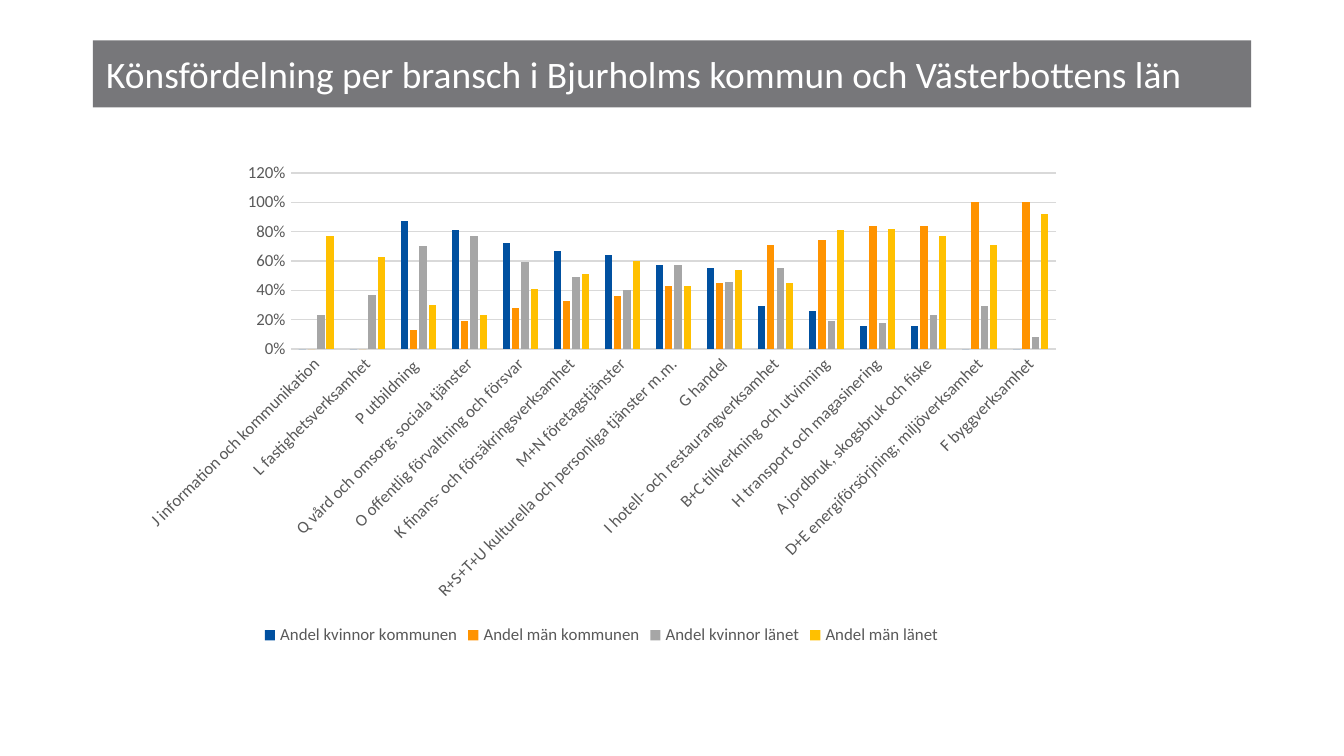
from pptx import Presentation
from pptx import util as u
from pptx.chart.data import CategoryChartData
from pptx.dml.color import RGBColor
from pptx.enum import chart as c, text

FONT = "Calibri"
TITLE = "Könsfördelning per bransch i Bjurholms kommun och Västerbottens län"

INDUSTRIES = [
    "J information och kommunikation",
    "L fastighetsverksamhet",
    "P utbildning ",
    "Q vård och omsorg; sociala tjänster",
    "O offentlig förvaltning och försvar",
    "K finans- och försäkringsverksamhet",
    "M+N företagstjänster",
    "R+S+T+U kulturella och personliga tjänster m.m.",
    "G handel",
    "I hotell- och restaurangverksamhet",
    "B+C tillverkning och utvinning",
    "H transport och magasinering",
    "A jordbruk, skogsbruk och fiske",
    "D+E energiförsörjning; miljöverksamhet",
    "F byggverksamhet",
]

# Name, colour, share per industry
SERIES = [
    ("Andel kvinnor kommunen", "0050A0",
     [0, 0, 0.87, 0.81, 0.72, 0.67, 0.64, 0.57, 0.55, 0.29, 0.26, 0.16, 0.16, 0, 0]),
    ("Andel män kommunen", "FF9300",
     [0, 0, 0.13, 0.19, 0.28, 0.33, 0.36, 0.43, 0.45, 0.71, 0.74, 0.84, 0.84, 1, 1]),
    ("Andel kvinnor länet", "A6A6A6",
     [0.23, 0.37, 0.7, 0.77, 0.59, 0.49, 0.4, 0.57, 0.46, 0.55, 0.19, 0.18, 0.23, 0.29, 0.08]),
    ("Andel män länet", "FFC000",
     [0.77, 0.63, 0.3, 0.23, 0.41, 0.51, 0.6, 0.43, 0.54, 0.45, 0.81, 0.82, 0.77, 0.71, 0.92]),
]


def colour(hex_value):
    return RGBColor.from_string(hex_value)


def set_font(font, size, hex_value):
    font.name = FONT
    font.size = u.Pt(size)
    font.bold = False
    font.color.rgb = colour(hex_value)


def set_line(line, hex_value):
    line.color.rgb = colour(hex_value)
    line.width = u.Pt(0.75)


def add_title(slide):
    title = slide.shapes.title
    title.left, title.top = u.Inches(0.69), u.Inches(0.3)
    title.width, title.height = u.Inches(8.62), u.Inches(0.5)
    title.fill.solid()
    title.fill.fore_color.rgb = colour("77777A")
    frame = title.text_frame
    frame.text = TITLE
    frame.word_wrap = True
    frame.auto_size = text.MSO_AUTO_SIZE.NONE
    frame.vertical_anchor = text.MSO_ANCHOR.MIDDLE
    paragraph = frame.paragraphs[0]
    paragraph.alignment = text.PP_ALIGN.LEFT
    set_font(paragraph.font, 20, "FFFFFF")


def format_axes(chart):
    category_axis, value_axis = chart.category_axis, chart.value_axis
    for axis in (category_axis, value_axis):
        axis.major_tick_mark = axis.minor_tick_mark = c.XL_TICK_MARK.NONE
        set_font(axis.tick_labels.font, 9, "595959")
    set_line(category_axis.format.line, "D9D9D9")

    # Slanted category labels
    for body in chart.element.xpath(".//c:catAx/c:txPr/a:bodyPr"):
        body.set("rot", "-2700000")
        body.set("vert", "horz")

    value_axis.minimum_scale, value_axis.maximum_scale = 0, 1.2
    value_axis.major_unit = 0.2
    value_axis.format.line.fill.background()
    set_line(value_axis.major_gridlines.format.line, "D9D9D9")
    value_axis.tick_labels.number_format = "0%"
    value_axis.tick_labels.number_format_is_linked = False


def add_share_chart(slide):
    data = CategoryChartData(number_format="0%")
    data.categories = INDUSTRIES
    for name, _, shares in SERIES:
        data.add_series(name, shares)
    chart = slide.shapes.add_chart(
        c.XL_CHART_TYPE.COLUMN_CLUSTERED, u.Inches(0.95), u.Inches(1.14),
        u.Inches(7.05), u.Inches(3.7), data).chart
    set_font(chart.font, 10, "000000")
    chart.has_title = False
    format_axes(chart)

    # Columns
    plot = chart.plots[0]
    plot.vary_by_categories = False
    plot.gap_width, plot.overlap = 219, -27
    for series, (_, hex_value, _) in zip(plot.series, SERIES):
        series.format.fill.solid()
        series.format.fill.fore_color.rgb = colour(hex_value)

    # Legend
    chart.has_legend = True
    chart.legend.position = c.XL_LEGEND_POSITION.BOTTOM
    chart.legend.include_in_layout = False
    set_font(chart.legend.font, 9, "595959")


def main():
    # Widescreen slide, 16:9
    presentation = Presentation()
    presentation.slide_width = u.Inches(10)
    presentation.slide_height = u.Inches(10 * 9 / 16)
    slide = presentation.slides.add_slide(presentation.slide_layouts[5])
    add_title(slide)
    add_share_chart(slide)
    presentation.save("out.pptx")


if __name__ == "__main__":
    main()
